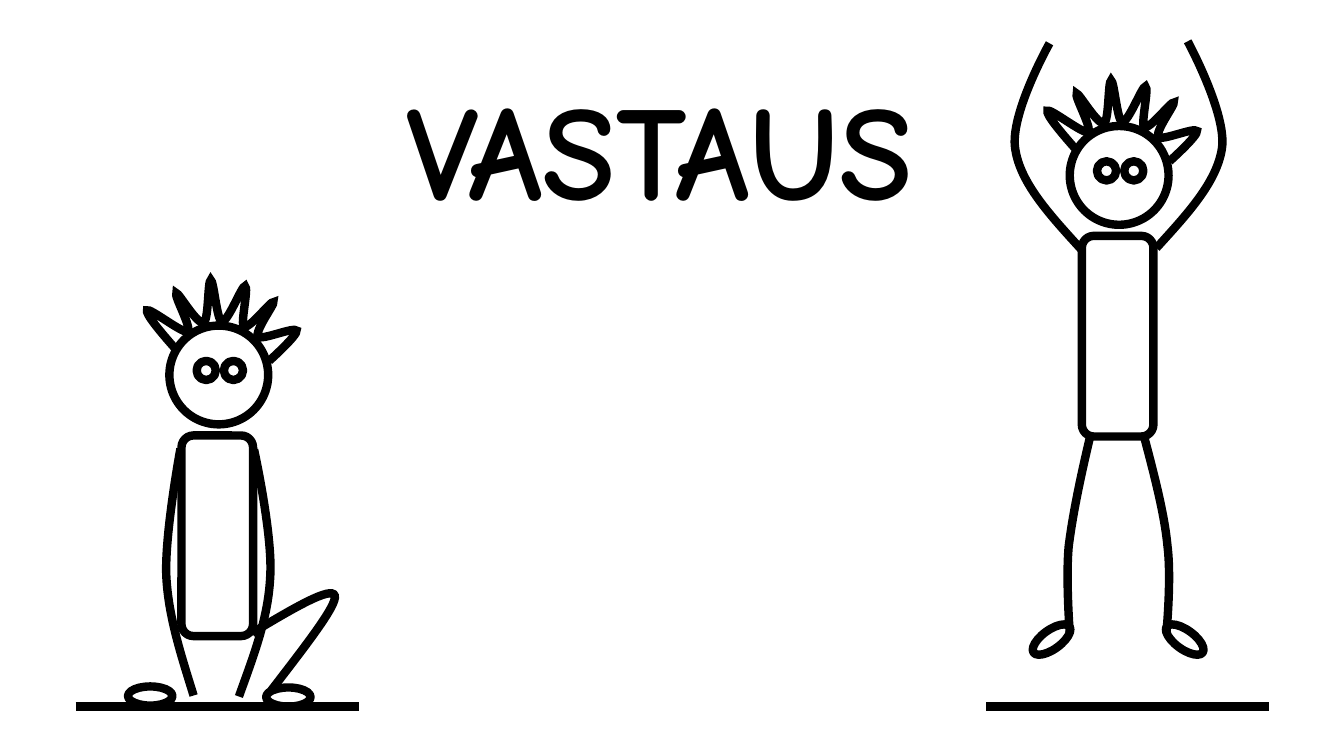
from dataclasses import dataclass

from lxml import etree
from pptx import Presentation
from pptx import util as u
from pptx.dml.color import RGBColor
from pptx.enum import shapes, text
from pptx.oxml import ns

PX = 9144


@dataclass(frozen=True)
class Theme:
    ink: RGBColor = RGBColor(0, 0, 0)
    stroke: u.Pt = u.Pt(6)
    font: str = "Comic Neue"
    title_size: u.Pt = u.Pt(96)


THEME = Theme()

HAIR = [
    (5, 22),
    (-10, 5), (-24, -12), (-22, -15),
    (-20, -18), (13, 8), (18, 6),
    (23, 3), (4, -30), (7, -32),
    (9, -33), (28, 0), (34, -3),
    (39, -5), (38, -45), (41, -45),
    (44, -45), (47, -5), (52, -4),
    (58, -3), (72, -40), (75, -39),
    (79, -38), (70, -1), (74, 1),
    (79, 4), (101, -25), (103, -23),
    (105, -22), (84, 6), (88, 11),
    (91, 15), (124, 1), (126, 5),
    (128, 9), (99, 35), (99, 35),
]

STANDING_LIMBS = [
    [(1081, 434), (1072, 472), (1064, 510), (1060, 542),
     (1057, 574), (1061, 627), (1061, 627)],
    [(1135, 434), (1145, 472), (1155, 510), (1158, 542),
     (1162, 574), (1157, 627), (1157, 627)],
    [(1147, 246), (1177, 213), (1207, 181), (1212, 147),
     (1217, 113), (1178, 41), (1178, 41)],
    [(1072, 247), (1042, 214), (1012, 182), (1007, 148),
     (1001, 114), (1041, 43), (1041, 43)],
]

SITTING_LIMBS = [
    [(237, 691), (251, 652), (266, 614), (268, 573),
     (271, 532), (252, 446), (252, 446)],
    [(250, 628), (290, 604), (329, 581), (332, 591),
     (335, 600), (302, 642), (269, 685)],
    [(192, 690), (180, 651), (167, 612), (165, 572),
     (163, 531), (179, 445), (179, 445)],
]


def ink(line):
    line.color.rgb = THEME.ink
    line.width = THEME.stroke


def outline(shape):
    shape.shadow.inherit = False
    shape.fill.background()
    ink(shape.line)


def add_part(parent, preset, left, top, width, height, rotation=0):
    part = parent.add_shape(preset, left * PX, top * PX, width * PX, height * PX)
    part.rotation = rotation
    outline(part)


def add_ellipse(parent, left, top, width, height, rotation=0):
    add_part(parent, shapes.MSO_SHAPE.OVAL, left, top, width, height, rotation)


def add_curve(parent, points):
    builder = parent.build_freeform(*points[0], scale=PX)
    builder.add_line_segments(points[1:], close=False)
    curve = builder.convert_to_shape()
    outline(curve)
    segments = list(curve.element.iter(ns.qn("a:lnTo")))
    for start in range(0, len(segments), 3):
        bezier = etree.Element(ns.qn("a:cubicBezTo"))
        segments[start].addprevious(bezier)
        for segment in segments[start:start + 3]:
            bezier.append(segment[0])
            segment.getparent().remove(segment)
    miter = etree.SubElement(curve.line._get_or_add_ln(), ns.qn("a:miter"))
    miter.set("lim", "800000")


def add_ground(parent, left):
    ground = parent.add_connector(
        shapes.MSO_CONNECTOR.STRAIGHT, left * PX, 701 * PX, (left + 281) * PX, 701 * PX)
    ink(ground.line)
    etree.SubElement(ground.element.spPr, ns.qn("a:effectLst"))


def add_figure(parent, left, top, limbs, feet):
    figure = parent.add_group_shape().shapes
    add_part(figure, shapes.MSO_SHAPE.ROUNDED_RECTANGLE, left + 12, top + 109, 71, 199)
    add_ellipse(figure, left, top, 98, 98)
    for limb in limbs:
        add_curve(figure, limb)
    add_curve(figure, [(left + x, top + y) for x, y in HAIR])
    for foot_left, foot_top, rotation in feet:
        add_ellipse(figure, foot_left, foot_top, 44, 19, rotation)
    for eye in (27, 54):
        add_ellipse(figure, left + eye, top + 35, 19, 19)
    return figure


def add_title(slide, wording):
    title = slide.shapes.title
    title.left, title.top, title.width, title.height = (
        179 * PX, 37 * PX, 950 * PX, 237 * PX)
    frame = title.text_frame
    frame.word_wrap = True
    frame.auto_size = text.MSO_AUTO_SIZE.NONE
    frame.vertical_anchor = text.MSO_ANCHOR.MIDDLE
    frame.margin_left = frame.margin_right = 13 * PX
    frame.margin_top = frame.margin_bottom = 7 * PX
    paragraph = frame.paragraphs[0]
    paragraph.alignment = text.PP_ALIGN.CENTER
    paragraph.line_spacing = 0.9
    run = paragraph.add_run()
    run.text = wording
    run.font.name = THEME.font
    run.font.size = THEME.title_size
    run.font.bold = True
    run.font.color.rgb = THEME.ink


def main():
    deck = Presentation()
    deck.slide_width, deck.slide_height = 1333 * PX, 750 * PX
    slide = deck.slides.add_slide(deck.slide_layouts.get_by_name("Title Only"))
    add_title(slide, "VASTAUS")
    standing = add_figure(slide.shapes, 1061, 125, STANDING_LIMBS,
                          [(1021, 625, 324), (1153, 625, 36)])
    add_ground(standing, 978)
    add_figure(slide.shapes, 168, 323, SITTING_LIMBS,
               [(127, 681, 0), (264, 682, 0)])
    add_ground(slide.shapes, 75)
    deck.save("out.pptx")


if __name__ == "__main__":
    main()
